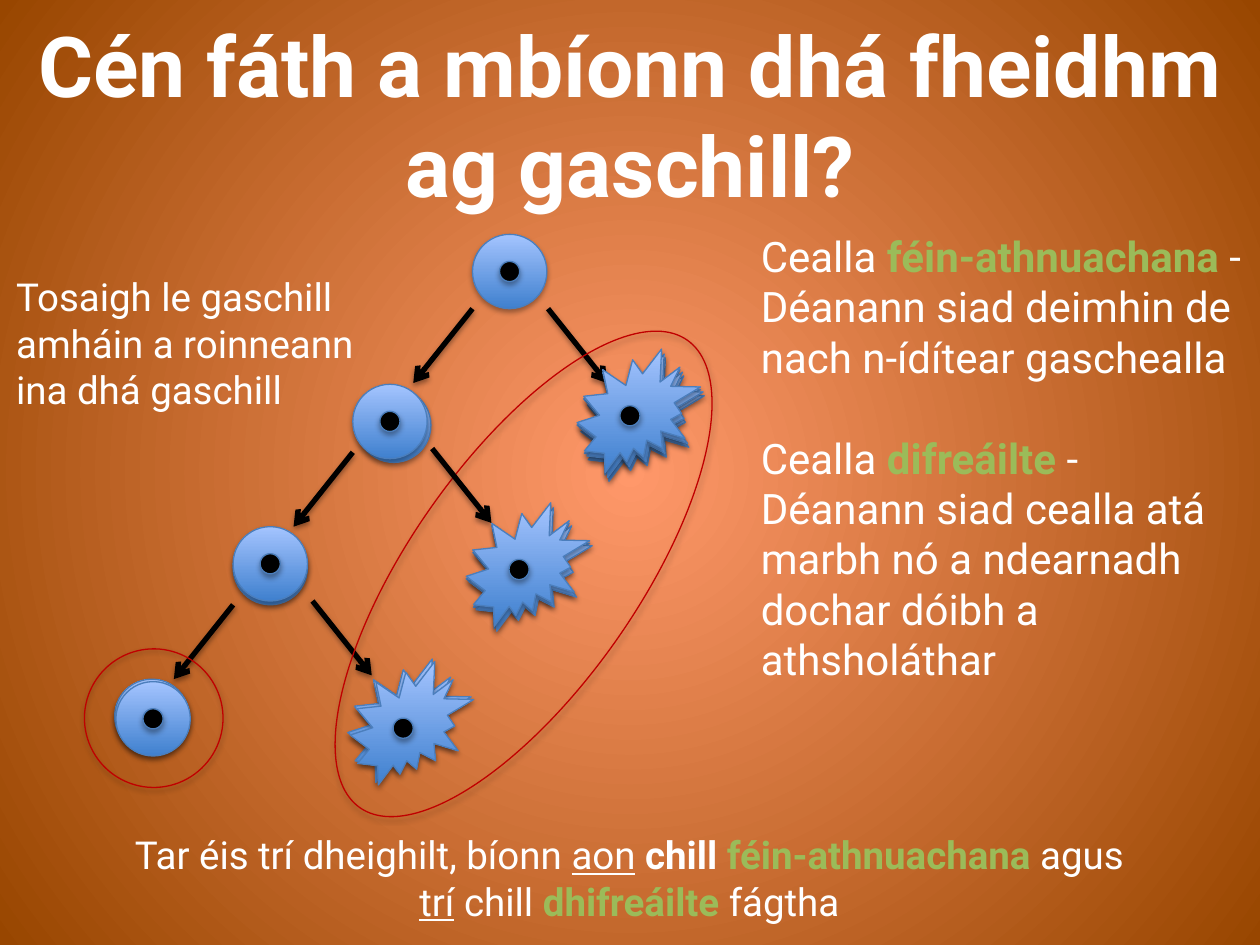
from dataclasses import dataclass
from functools import partial

from lxml import etree
from pptx import Presentation, util as u
from pptx.dml import color as c
from pptx.enum import shapes as s, text as t
from pptx.oxml import ns

Inches = u.Inches


@dataclass(frozen=True)
class Theme:
    """Colours and type sizes of the slide."""
    font: str = "Roboto"
    white: str = "FFFFFF"
    black: str = "000000"
    green: str = "9BBB59"
    text_edge: str = "4F81BD"
    cell_edge: str = "4B7EBC"
    ring: str = "C00000"
    cell_fill: tuple = ("3F80CE", "A4C4FF")
    backdrop: tuple = ("FF986A", "984600")
    title: float = 48
    main: float = 24
    note: float = 22
    thin: float = 0.75
    thick: float = 3


THEME = Theme()


def rgb(code):
    """Turn a hex code into a colour."""
    return c.RGBColor.from_string(code)


def add_node(parent, tag, **attributes):
    """Append a drawing element to a parent."""
    return etree.SubElement(parent, ns.qn(f"a:{tag}"), attributes)


def set_gradient(fill, colours):
    """Give a fill a two-colour gradient."""
    fill.gradient()
    for stop, colour in zip(fill.gradient_stops, colours):
        stop.color.rgb = rgb(colour)


def set_backdrop(page):
    """Fill the page with a gradient that spreads from its centre."""
    fill = page.background.fill
    set_gradient(fill, THEME.backdrop)
    gradient = page.element.find(".//" + ns.qn("a:gradFill"))
    gradient.remove(gradient.find(ns.qn("a:lin")))
    spread = add_node(gradient, "path", path="circle")
    add_node(spread, "fillToRect", l="50000", t="50000", r="50000", b="50000")


def add_shadow(effects, opacity, distance):
    """Put a soft downward shadow in an effect list."""
    shadow = add_node(effects, "outerShdw", blurRad=str(u.Pt(3.1)),
                      dist=str(u.Pt(distance)), dir="5400000", rotWithShape="0")
    shade = add_node(shadow, "srgbClr", val=THEME.black)
    add_node(shade, "alpha", val=str(opacity * 1000))


def add_figure(page, kind, left, top, width, height, fill=None, edge=THEME.cell_edge, turn=0):
    """Draw a shadowed preset shape."""
    shape = page.shapes.add_shape(kind, *map(Inches, (left, top, width, height)))
    shape.rotation = turn
    if fill is None:
        shape.fill.background()
    elif isinstance(fill, tuple):
        set_gradient(shape.fill, fill)
        shape.fill.gradient_angle = 90
    else:
        shape.fill.solid()
        shape.fill.fore_color.rgb = rgb(fill)
    shape.line.color.rgb = rgb(edge)
    shape.line.width = u.Pt(THEME.thin)
    shape.shadow.inherit = False
    add_shadow(shape.element.spPr.find(ns.qn("a:effectLst")), 35, 1.8)


def add_body(page, left, top, kind, size, across, down):
    """Draw a cell body with its nucleus."""
    add_figure(page, kind, left, top, size, size, THEME.cell_fill)
    add_figure(page, s.MSO_SHAPE.OVAL, left + across, top + down, 0.16, 0.16, THEME.black)


def add_arrow(page, left, top, run):
    """Draw an arrow to a daughter cell."""
    line = page.shapes.add_connector(
        s.MSO_CONNECTOR.STRAIGHT, *map(Inches, (left, top, left + run, top + 0.59)))
    line.line.color.rgb = rgb(THEME.black)
    line.line.width = u.Pt(THEME.thick)
    add_node(line.line._get_or_add_ln(), "tailEnd", type="arrow")
    add_shadow(add_node(line._element.spPr, "effectLst"), 38, 1.6)


def add_span(para, words, size, bold=False, underline=False, key=False):
    """Add formatted words, outlined in green where they are key terms."""
    span = para.add_run()
    span.text = words
    font = span.font
    font.name, font.size = THEME.font, u.Pt(size)
    font.bold, font.underline = bold or key, underline
    font.color.rgb = rgb(THEME.green if key else THEME.white)
    if key:
        edge = etree.Element(ns.qn("a:ln"), w=str(u.Pt(THEME.thin)))
        add_node(add_node(edge, "solidFill"), "srgbClr", val=THEME.text_edge)
        font._element.insert(0, edge)


def add_text(page, place, paragraphs, size, align=t.PP_ALIGN.LEFT,
             anchor=t.MSO_ANCHOR.TOP, fit=t.MSO_AUTO_SIZE.SHAPE_TO_FIT_TEXT, gap=0):
    """Write paragraphs of (words, format) pairs in a text box."""
    frame = page.shapes.add_textbox(*map(Inches, place)).text_frame
    frame.word_wrap, frame.auto_size, frame.vertical_anchor = True, fit, anchor
    for index, spans in enumerate(paragraphs):
        para = frame.add_paragraph() if index else frame.paragraphs[0]
        para.alignment = align
        if index:
            para.space_before = u.Pt(gap)
        for words, look in spans:
            add_span(para, words, size, **look)


def add_divisions(page):
    """Draw the cells that come out of three divisions."""
    cell = partial(add_body, kind=s.MSO_SHAPE.OVAL, size=0.59, across=0.215, down=0.215)
    star = partial(add_body, kind=s.MSO_SHAPE.EXPLOSION2, size=0.98, across=0.34, down=0.45)
    to_left, to_right = partial(add_arrow, run=-0.47), partial(add_arrow, run=0.47)
    ring = partial(add_figure, kind=s.MSO_SHAPE.OVAL, edge=THEME.ring, turn=35)
    first = [(cell, 3.75, 1.86), (star, 4.61, 2.84), (to_left, 3.75, 2.45),
             (to_right, 4.35, 2.45), (cell, 2.83, 3.08)]
    third = [(star, 4.58, 2.79), (cell, 1.85, 4.21), (star, 3.7, 4.01),
             (to_left, 1.85, 4.8), (cell, 0.91, 5.39), (to_right, 2.48, 4.77),
             (star, 2.76, 5.23)]
    result = [(star, 4.6, 2.81), (star, 3.72, 4.03), (cell, 0.92, 5.41),
              (star, 2.78, 5.25), (partial(ring, width=1.81, height=4.53), 3.25, 2.29),
              (partial(ring, width=1.1, height=1.1), 0.67, 5.15)]
    second = [(star, 4.58, 2.77), (to_left, 2.8, 3.59), (cell, 1.85, 4.18),
              (to_right, 3.43, 3.56), (star, 3.7, 3.99), (cell, 2.8, 3.05)]
    for draw, left, top in first + third + result + second:
        draw(page, left=left, top=top)


def main():
    """Build the slide and save it."""
    deck = Presentation()
    deck.slide_width, deck.slide_height = Inches(10), Inches(7.5)
    page = deck.slides.add_slide(deck.slide_layouts[6])
    set_backdrop(page)
    plain, key, under = {}, {"key": True}, {"underline": True}
    centre = t.PP_ALIGN.CENTER
    add_text(page, (0, 0.52, 10, 0.77),
             [[("Cén fáth a mbíonn dhá fheidhm ag gaschill?", {"bold": True})]],
             THEME.title, centre, t.MSO_ANCHOR.MIDDLE, t.MSO_AUTO_SIZE.NONE)
    add_text(page, (0.03, 2.12, 3.08, 1.21),
             [[("Tosaigh le gaschill amháin a roinneann ina dhá gaschill", plain)]], THEME.note)
    add_text(page, (0.11, 6.55, 9.77, 0.84), [
        [("Tar éis trí dheighilt, bíonn ", plain), ("aon", under), (" chill ", {"bold": True}),
         ("féin-athnuachana ", key), ("agus", plain)],
        [("trí", under), (" chill ", plain), ("dhifreáilte ", key), ("fágtha", plain)],
    ], THEME.note, centre)
    add_text(page, (5.94, 1.78, 4.06, 4.51), [
        [("Cealla ", plain), ("féin-athnuachana ", key),
         ("- Déanann siad deimhin de nach n-ídítear gaschealla", plain)],
        [("Cealla ", plain), ("difreáilte ", key),
         ("- Déanann siad cealla atá marbh nó a ndearnadh dochar dóibh a athsholáthar", plain)],
    ], THEME.main, gap=28.8)
    add_divisions(page)
    deck.save("out.pptx")


if __name__ == "__main__":
    main()
